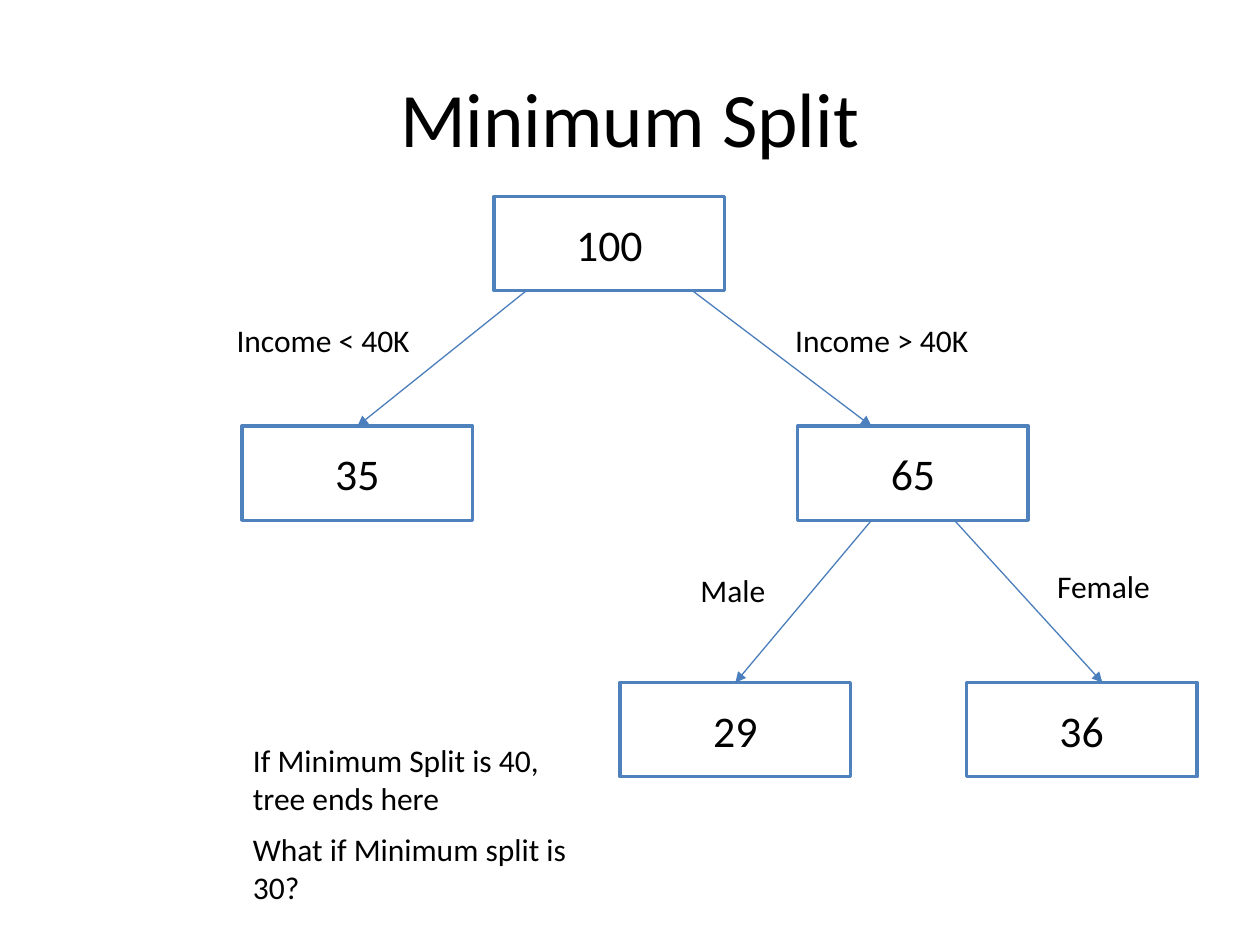
import lxml.etree
import pptx
import pptx.dml.color
import pptx.enum.shapes
import pptx.enum.text
import pptx.oxml.ns
import pptx.util
from pptx.util import Cm

COLORS = {"paper": "FFFFFF", "ink": "000000", "border": "4F81BD", "arrow": "4B7EBC"}
FONT = "Calibri"
NODE_WIDTH, NODE_HEIGHT = 4.65, 1.9
LABEL_HEIGHT = 1.02

# Node name: value, left and top within the tree, in cm
NODES = {
    "root": ("100", 5.08, 0),
    "low income": ("35", 0, 4.63),
    "high income": ("65", 11.2, 4.63),
    "male": ("29", 7.62, 9.8),
    "female": ("36", 14.6, 9.8),
}
# Parent, child, and the share of the node width where the arrow leaves and lands
BRANCHES = [
    ("root", "low income", 0.14, 0.5),
    ("root", "high income", 0.86, 0.32),
    ("high income", "female", 0.68, 0.59),
    ("high income", "male", 0.32, 0.5),
]
# Text, left, top and width within the tree, in cm
LABELS = [
    ("Income < 40K", -0.36, 2.39, 4.45),
    ("Income > 40K", 10.9, 2.39, 4.45),
    ("Male", 8.99, 7.42, 2.34),
    ("Female", 16.18, 7.34, 2.64),
]
NOTES = ["If Minimum Split is 40, tree ends here", "What if Minimum split is 30?"]


def color(name):
    return pptx.dml.color.RGBColor.from_string(COLORS[name])


def write(shape, text, size, align):
    frame = shape.text_frame
    frame.word_wrap = True
    para = frame.paragraphs[0]
    para.text = text
    para.alignment = align
    para.font.name = FONT
    para.font.size = pptx.util.Pt(size)
    para.font.color.rgb = color("ink")


def add_title(slide, text, left, top, width, height):
    title = slide.shapes.title
    title.left, title.top = Cm(left), Cm(top)
    title.width, title.height = Cm(width), Cm(height)
    write(title, text, 44, pptx.enum.text.PP_ALIGN.CENTER)
    title.text_frame.vertical_anchor = pptx.enum.text.MSO_ANCHOR.MIDDLE


def add_label(slide, text, left, top, width, height):
    box = slide.shapes.add_textbox(Cm(left), Cm(top), Cm(width), Cm(height))
    write(box, text, 18, pptx.enum.text.PP_ALIGN.LEFT)
    box.text_frame.auto_size = pptx.enum.text.MSO_AUTO_SIZE.SHAPE_TO_FIT_TEXT


def add_node(slide, text, left, top):
    node = slide.shapes.add_shape(
        pptx.enum.shapes.MSO_SHAPE.RECTANGLE,
        Cm(left), Cm(top), Cm(NODE_WIDTH), Cm(NODE_HEIGHT))
    node.shadow.inherit = False
    node.fill.solid()
    node.fill.fore_color.rgb = color("paper")
    node.line.color.rgb = color("border")
    node.line.width = pptx.util.Pt(2)
    write(node, text, 25, pptx.enum.text.PP_ALIGN.CENTER)
    node.text_frame.vertical_anchor = pptx.enum.text.MSO_ANCHOR.MIDDLE


def add_arrow(slide, start_x, start_y, end_x, end_y):
    arrow = slide.shapes.add_connector(
        pptx.enum.shapes.MSO_CONNECTOR.STRAIGHT,
        Cm(start_x), Cm(start_y), Cm(end_x), Cm(end_y))
    arrow.line.color.rgb = color("arrow")
    arrow.line.width = pptx.util.Pt(0.75)
    qn = pptx.oxml.ns.qn
    line = arrow.line._get_or_add_ln()
    lxml.etree.SubElement(line, qn("a:tailEnd"), type="triangle")
    lxml.etree.SubElement(arrow._element.spPr, qn("a:effectLst"))


def add_tree(slide, left, top):
    for text, x, y in NODES.values():
        add_node(slide, text, left + x, top + y)
    for parent, child, leaves, lands in BRANCHES:
        _, parent_x, parent_y = NODES[parent]
        _, child_x, child_y = NODES[child]
        add_arrow(slide,
                  left + parent_x + leaves * NODE_WIDTH, top + parent_y + NODE_HEIGHT,
                  left + child_x + lands * NODE_WIDTH, top + child_y)
    for text, x, y, width in LABELS:
        add_label(slide, text, left + x, top + y, width, LABEL_HEIGHT)


def add_notes(slide, left, top, width, height):
    """Stack the remarks in equal rows of the given box."""
    row = height / len(NOTES)
    for index, text in enumerate(NOTES):
        add_label(slide, text, left, top + index * row, width, row)


def main():
    deck = pptx.Presentation()
    deck.slide_width, deck.slide_height = Cm(25.4), Cm(19.05)
    slide = deck.slides.add_slide(deck.slide_layouts.get_by_name("Title Only"))
    slide.background.fill.solid()
    slide.background.fill.fore_color.rgb = color("paper")
    add_title(slide, "Minimum Split", 1.27, 0.76, 22.86, 3.18)
    add_tree(slide, 4.88, 3.96)
    add_notes(slide, 4.85, 14.81, 7.19, 3.6)
    deck.save("out.pptx")


if __name__ == "__main__":
    main()
